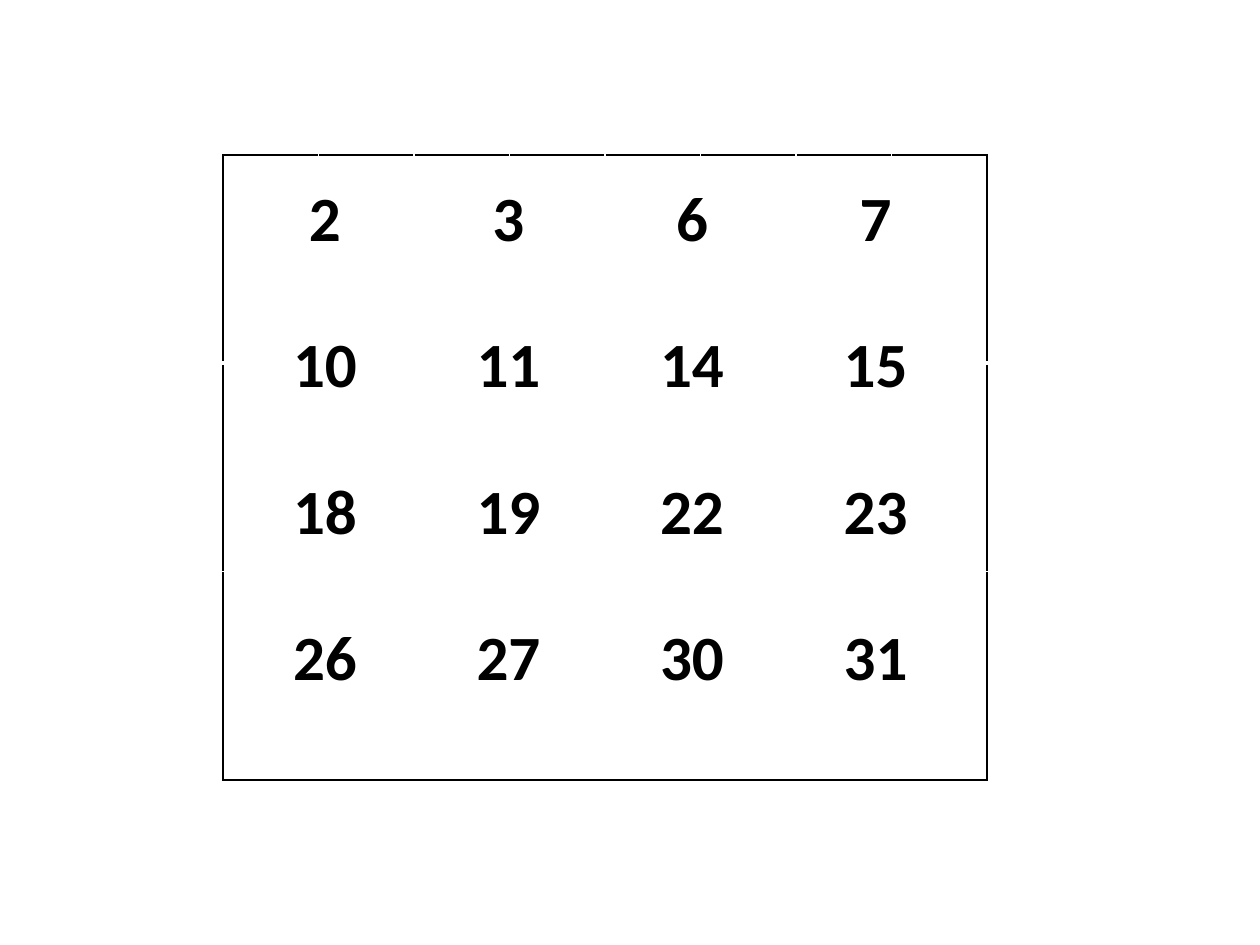
from lxml import etree
from pptx import Presentation
from pptx.dml.color import RGBColor
from pptx.enum import text
from pptx.oxml import ns
from pptx.util import Cm, Pt

BLACK = RGBColor(0, 0, 0)
WHITE = RGBColor(255, 255, 255)
FONT = "Calibri"
FRAME_ROWS, FRAME_COLUMNS = 3, 8
# Numbers below 32 whose second binary digit is 1
NUMBERS = [n for n in range(32) if n & 2]
CARD_COLUMNS = 4


def set_borders(cell, borders):
    """Draw the sides given as {"L": (colour, points), ...}, in the order L, R, T, B."""
    properties = cell._tc.get_or_add_tcPr()
    for index, side in enumerate("LRTB"):
        colour, points = borders[side]
        line = etree.Element(ns.qn(f"a:ln{side}"), w=str(Pt(points)))
        fill = etree.SubElement(line, ns.qn("a:solidFill"))
        etree.SubElement(fill, ns.qn("a:srgbClr"), val=str(colour))
        properties.insert(index, line)


def add_grid(page, rows, columns, left, top, width, height):
    """Add a table of equal, unfilled cells."""
    table = page.shapes.add_table(rows, columns, left, top, width, height).table
    for column in table.columns:
        column.width = int(width / columns)
    for row in table.rows:
        row.height = int(height / rows)
    for cell in table.iter_cells():
        cell.fill.background()
    return table


def add_frame(page):
    """Add the empty table whose outer border is black."""
    table = add_grid(page, FRAME_ROWS, FRAME_COLUMNS,
                     Cm(4.5), Cm(3.12), Cm(15.4), Cm(12.6))
    last_row, last_column = FRAME_ROWS - 1, FRAME_COLUMNS - 1
    for r in range(FRAME_ROWS):
        for c in range(FRAME_COLUMNS):
            set_borders(table.cell(r, c), {
                "L": (BLACK if c == 0 else WHITE, 1),
                "R": (BLACK if c == last_column else WHITE, 1),
                "T": (BLACK if r == 0 else WHITE, 1),
                "B": (BLACK if r == last_row else WHITE, 3 if r == 0 else 1),
            })


def write_number(cell, number):
    para = cell.text_frame.paragraphs[0]
    para.alignment = text.PP_ALIGN.CENTER
    span = para.add_run()
    span.text = str(number)
    span.font.name = FONT
    span.font.size = Pt(36)
    span.font.bold = True
    span.font.color.rgb = BLACK


def add_number_card(page):
    rows = len(NUMBERS) // CARD_COLUMNS
    table = add_grid(page, rows, CARD_COLUMNS,
                     Cm(4.7), Cm(3.53), Cm(14.8), Cm(11.8))
    for index, number in enumerate(NUMBERS):
        r, c = divmod(index, CARD_COLUMNS)
        cell = table.cell(r, c)
        write_number(cell, number)
        borders = dict.fromkeys("LRTB", (WHITE, 1))
        if r == 0:
            borders["B"] = (WHITE, 3)
        set_borders(cell, borders)


def main():
    deck = Presentation()
    deck.slide_width, deck.slide_height = Cm(25.4), Cm(19.05)
    page = deck.slides.add_slide(deck.slide_layouts[6])
    add_frame(page)
    add_number_card(page)
    deck.save("out.pptx")


if __name__ == "__main__":
    main()
